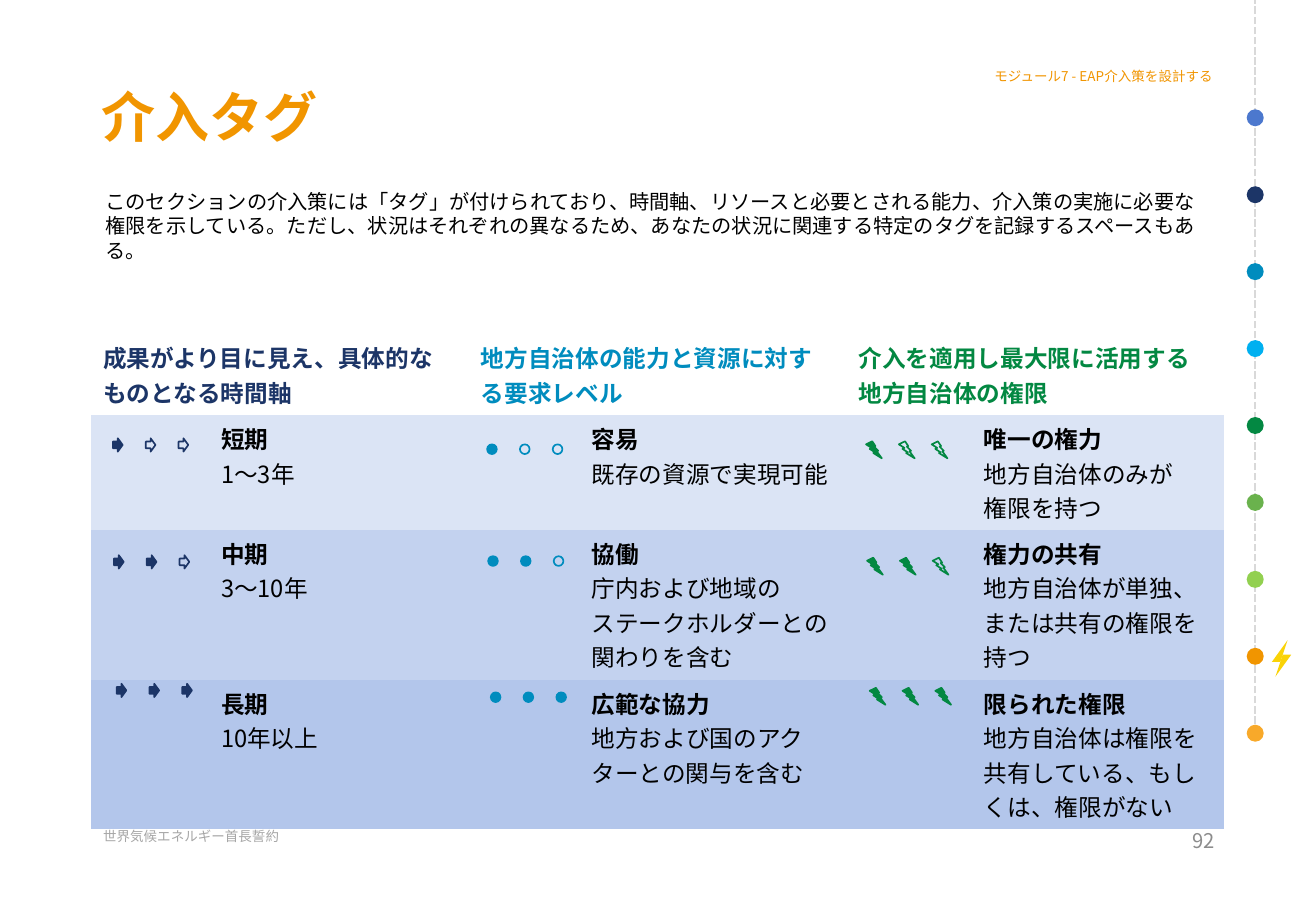
import copy

import lxml.etree
import pptx
import pptx.dml.color
import pptx.enum.dml
import pptx.enum.shapes
import pptx.enum.text
import pptx.oxml.ns
import pptx.util

RGB = pptx.dml.color.RGBColor
SHAPE = pptx.enum.shapes.MSO_SHAPE
ALIGN = pptx.enum.text.PP_ALIGN
ANCHOR = pptx.enum.text.MSO_ANCHOR
qn = pptx.oxml.ns.qn

FONT = "Noto Sans CJK JP"
NO_GRID_STYLE = "{2D5ABB26-0587-4C30-8999-92F81FD0307C}"
COLUMNS, ROWS = 130, 90  # grid of the slide, twelve units to the inch

BLACK = RGB(0x00, 0x00, 0x00)
ORANGE = RGB(0xF1, 0x95, 0x00)
NAVY = RGB(0x1C, 0x35, 0x67)
BLUE = RGB(0x00, 0x8C, 0xBE)
GREEN = RGB(0x03, 0x88, 0x42)
YELLOW = RGB(0xFA, 0xD3, 0x07)
FOOTER_GREY = RGB(0xA6, 0xA6, 0xA6)
NUMBER_GREY = RGB(0x8C, 0x8C, 0x8C)
LINE_GREY = RGB(0xD9, 0xD9, 0xD9)
MODULE_COLOURS = [
    RGB(0x4C, 0x78, 0xCE), NAVY, BLUE, RGB(0x00, 0xB0, 0xF0), GREEN,
    RGB(0x6A, 0xB2, 0x4D), RGB(0x92, 0xD0, 0x50), ORANGE, RGB(0xF8, 0xA9, 0x2A),
]
CURRENT_MODULE = 7
LEVEL_FILLS = [RGB(0xDB, 0xE4, 0xF5), RGB(0xC3, 0xD2, 0xEF), RGB(0xB3, 0xC6, 0xEB)]

TAG_WIDTHS = [11.64, 25.68, 10.92, 26.4, 12.36, 24.96]
TAG_HEIGHTS = [8, 11.35, 14.8, 14.8]
MARK_STEP = 3.24
LEVEL_SHIFTS = [0, 0.1, 0.36]

# Each tag: heading, colour, mark shape, mark size, left offset, top offsets, levels
TAGS = [
    ("成果がより目に見え、具体的な\nものとなる時間軸", NAVY,
     SHAPE.RIGHT_ARROW, (0.96, 1.32), 2.16, (2.3, 2.5, 0.4),
     [("短期", "1～3年"), ("中期", "3～10年"), ("長期", "10年以上")]),
    ("地方自治体の能力と資源に対する要求レベル", BLUE,
     SHAPE.OVAL, (0.96, 0.96), 1.8, (2.9, 2.6, 1.25),
     [("容易", "既存の資源で実現可能"),
      ("協働", "庁内および地域の\nステークホルダーとの関わりを含む"),
      ("広範な協力", "地方および国のアクターとの関与を含む")]),
    ("介入を適用し最大限に活用する\n地方自治体の権限", GREEN,
     SHAPE.LIGHTNING_BOLT, (1.56, 1.68), 1.92, (2.6, 2.75, 0.8),
     [("唯一の権力", "地方自治体のみが\n権限を持つ"),
      ("権力の共有", "地方自治体が単独、\nまたは共有の権限を持つ"),
      ("限られた権限", "地方自治体は権限を共有している、もしくは、権限がない")]),
]


def grid(*units):
    return [pptx.util.Inches(unit / 12) for unit in units]


def write(paragraph, text, size=14, colour=BLACK, bold=False, align=ALIGN.LEFT,
          spacing=1.0):
    paragraph.text = text.replace("\n", "\v")
    paragraph.alignment = align
    paragraph.line_spacing = spacing
    for run in paragraph.runs:
        run.font.name = FONT
        run.font.size = pptx.util.Pt(size)
        run.font.bold = bold
        run.font.color.rgb = colour
        properties = run.font._element
        lxml.etree.SubElement(properties, qn("a:ea")).set("typeface", FONT)
    for line_break in paragraph._p.findall(qn("a:br")):
        line_break.insert(0, copy.deepcopy(properties))


def add_text(slide, box, text, anchor=ANCHOR.TOP, top_inset=0.6, **style):
    frame = slide.shapes.add_textbox(*grid(*box)).text_frame
    frame.word_wrap = True
    frame.vertical_anchor = anchor
    frame.margin_top, = grid(top_inset)
    write(frame.paragraphs[0], text, **style)


def paint(shape, fill=None, line=None):
    shape.shadow.inherit = False
    if fill is None:
        shape.fill.background()
    else:
        shape.fill.solid()
        shape.fill.fore_color.rgb = fill
    if line is None:
        shape.line.fill.background()
    else:
        shape.line.color.rgb = line
        shape.line.width = pptx.util.Pt(1)


def add_current_module_bolt(slide, centre_x, centre_y):
    """Draw the bolt as one half and the same half turned by 180 degrees."""
    half = [(-0.12, 0.36), (-0.96, 0.36), (0.6, -1.8), (0, 0)]
    for turn in (1, -1):
        points = [grid(centre_x + turn * x, centre_y + turn * y) for x, y in half]
        builder = slide.shapes.build_freeform(*points[0])
        builder.add_line_segments(points[1:], close=True)
        paint(builder.convert_to_shape(), YELLOW)


def add_timeline(slide, box):
    left, top, width, height = box
    axis = left + width / 2
    track = slide.shapes.add_connector(
        pptx.enum.shapes.MSO_CONNECTOR.STRAIGHT, *grid(axis, top + height, axis, top))
    track.line.color.rgb = LINE_GREY
    track.line.width = pptx.util.Pt(1.5)
    track.line.dash_style = pptx.enum.dml.MSO_LINE.SQUARE_DOT
    lxml.etree.SubElement(track._element.spPr, qn("a:effectLst"))
    first, step = top + 10.8, 7.6
    for module, colour in enumerate(MODULE_COLOURS):
        dot = slide.shapes.add_shape(
            SHAPE.OVAL, *grid(left, first + module * step, width, width))
        paint(dot, colour)
    add_current_module_bolt(
        slide, axis + 2.6, first + CURRENT_MODULE * step + width / 2 + 0.2)


def add_tag_table(slide, left, top):
    table = slide.shapes.add_table(
        len(TAG_HEIGHTS), len(TAG_WIDTHS),
        *grid(left, top, sum(TAG_WIDTHS), sum(TAG_HEIGHTS))).table
    table.first_row = table.horz_banding = False
    table._tbl.tblPr.find(qn("a:tableStyleId")).text = NO_GRID_STYLE
    for column, width in zip(table.columns, grid(*TAG_WIDTHS)):
        column.width = width
    for row, height in zip(table.rows, grid(*TAG_HEIGHTS)):
        row.height = height
    for column in range(len(TAG_WIDTHS)):
        table.cell(0, column).fill.background()
        for level, colour in enumerate(LEVEL_FILLS, start=1):
            cell = table.cell(level, column)
            cell.fill.solid()
            cell.fill.fore_color.rgb = colour
    for tag, (heading, colour, *_, levels) in enumerate(TAGS):
        heading_cell = table.cell(0, 2 * tag)
        heading_cell.merge(table.cell(0, 2 * tag + 1))
        write(heading_cell.text_frame.paragraphs[0], heading, colour=colour, bold=True)
        for level, (name, meaning) in enumerate(levels, start=1):
            frame = table.cell(level, 2 * tag + 1).text_frame
            write(frame.paragraphs[0], name, bold=True)
            write(frame.add_paragraph(), meaning)


def add_tag_marks(slide, left, top):
    """Place three marks per level, filled up to that level."""
    for tag, (_, colour, kind, size, inset, drops, levels) in enumerate(TAGS):
        tag_left = left + sum(TAG_WIDTHS[:2 * tag]) + inset
        for level in range(len(levels)):
            mark_top = top + sum(TAG_HEIGHTS[:level + 1]) + drops[level]
            for mark in range(3):
                mark_left = tag_left + LEVEL_SHIFTS[level] + mark * MARK_STEP
                shape = slide.shapes.add_shape(kind, *grid(mark_left, mark_top, *size))
                paint(shape, colour if mark <= level else None, colour)


def main():
    deck = pptx.Presentation()
    deck.slide_width, deck.slide_height = grid(COLUMNS, ROWS)
    slide = deck.slides.add_slide(deck.slide_layouts[6])
    add_text(slide, (9, 81.24, 22, 4.8), "世界気候エネルギー首長誓約",
             size=8, colour=FOOTER_GREY)
    add_timeline(slide, (123.16, 0, 1.68, 72.5))
    add_text(slide, (8.88, 9, 112, 13), "介入タグ", top_inset=0,
             size=32, colour=ORANGE, bold=True, spacing=0.9)
    add_text(slide, (80, 6, 41, 2.9), "モジュール7 - EAP介入策を設計する",
             anchor=ANCHOR.BOTTOM, size=8, colour=ORANGE, align=ALIGN.RIGHT, spacing=0.9)
    add_tag_table(slide, 9, 33)
    add_tag_marks(slide, 9, 33)
    add_text(slide, (9.24, 18.12, 111.72, 10),
             "このセクションの介入策には「タグ」が付けられており、時間軸、リソースと必要とされる能力、"
             "介入策の実施に必要な権限を示している。ただし、状況はそれぞれの異なるため、"
             "あなたの状況に関連する特定のタグを記録するスペースもある。", size=12)
    add_text(slide, (115, 81.24, 6.2, 4.8), "92",
             size=12, colour=NUMBER_GREY, align=ALIGN.RIGHT)
    deck.save("out.pptx")


if __name__ == "__main__":
    main()
